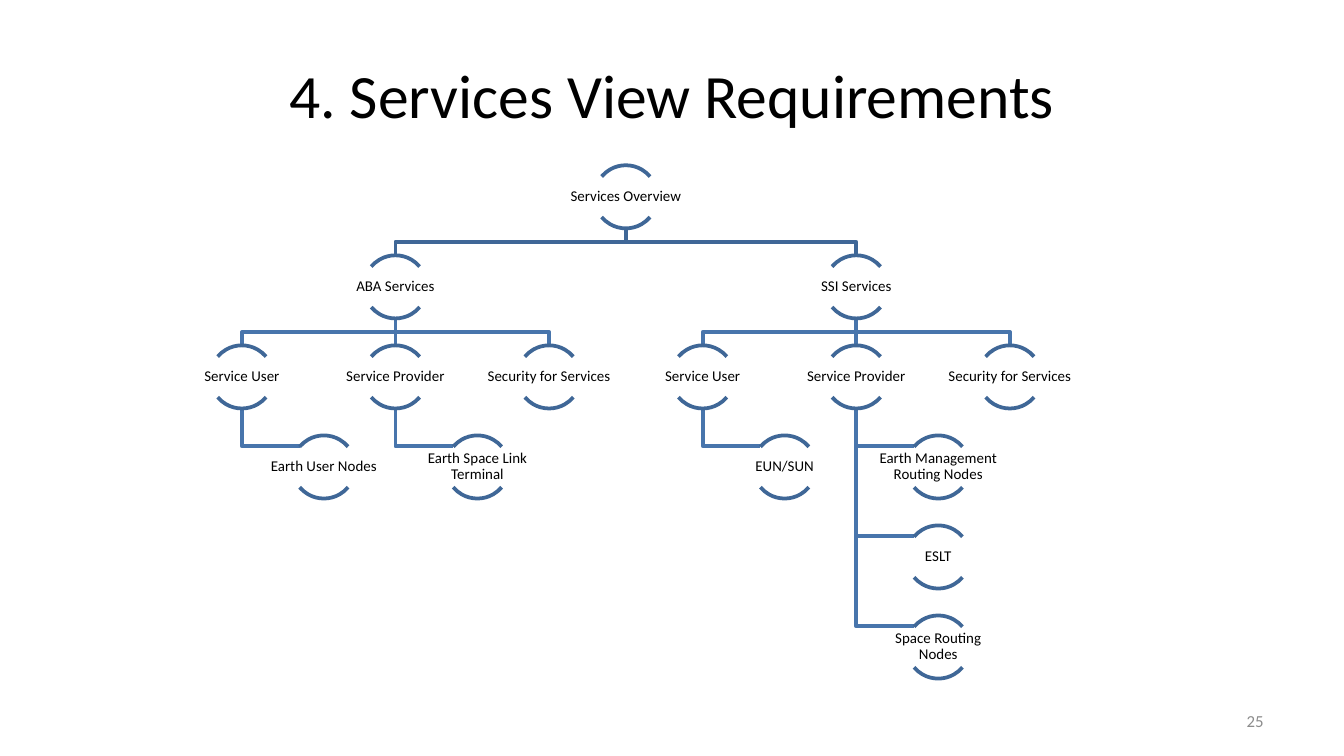
"""Build the services view slide: a title above a tree of services."""
from pptx import Presentation
from pptx.dml.color import RGBColor
from pptx.enum.shapes import MSO_CONNECTOR, MSO_SHAPE
from pptx.enum.text import MSO_ANCHOR, PP_ALIGN
from pptx.oxml.ns import qn
from pptx.util import Inches, Pt

TITLE = "4. Services View Requirements"
NUMBER = "25"
TREE = [
    ("Services Overview", 2.5, 0, None),
    ("ABA Services", 1, 1, 0),
    ("SSI Services", 4, 1, 0),
    ("Service User", 0, 2, 1),
    ("Service Provider", 1, 2, 1),
    ("Security for Services", 2, 2, 1),
    ("Service User", 3, 2, 2),
    ("Service Provider", 4, 2, 2),
    ("Security for Services", 5, 2, 2),
    ("Earth User Nodes", 0, 3, 3),
    ("Earth Space Link Terminal", 1, 3, 4),
    ("EUN/SUN", 3, 3, 6),
    ("Earth Management Routing Nodes", 4, 3, 7),
    ("ESLT", 4, 4, 7),
    ("Space Routing Nodes", 4, 5, 7),
]
COLORS = {"text": "000000", "number": "8C8C8C", "dark": "3F6797", "light": "4875AC"}
FONT = "Calibri"
WIDTH = 10
HEIGHT = WIDTH * 9 / 16
LEFT, TOP = 1.8, 1.23
COL, ROW = 8 / 7, 0.67
RING, INDENT = 0.47, 0.61
WIDE, HIGH = 0.95, 0.3
ARCS = [(132, 192), (24, 84)]


def color(name):
    return RGBColor.from_string(COLORS[name])


def style(frame, text, size, align, name="text"):
    frame.text = text
    frame.word_wrap = True
    frame.vertical_anchor = MSO_ANCHOR.MIDDLE
    para = frame.paragraphs[0]
    para.alignment = align
    font = para.runs[0].font
    font.name, font.size, font.color.rgb = FONT, Pt(size), color(name)
    return para


def label(slide, text, box, size, align, name="text"):
    frame = slide.shapes.add_textbox(*map(Inches, box)).text_frame
    return frame, style(frame, text, size, align, name)


def place(node):
    _, col, row, _ = node
    shift = INDENT if row > 2 else 0
    return LEFT + col * COL + shift, TOP + row * ROW


def ink(shape, name):
    shape.line.color.rgb = color(name)
    shape.line.width = Pt(2)


def link(slide, child):
    x, y = place(child)
    px, py = place(TREE[child[3]])
    py += RING
    name = "dark" if child[2] == 1 else "light"
    if child[2] > 2:
        bend = y + 0.08
        points = [(px, py), (px, bend), (x - 0.18, bend)]
    else:
        mid = (py + y) / 2
        points = [(px, py), (px, mid), (x, mid), (x, y)]
    points = [(Inches(a), Inches(b)) for a, b in points]
    if px == x:
        line = slide.shapes.add_connector(
            MSO_CONNECTOR.STRAIGHT, *points[0], *points[-1])
        props = line._element.spPr
        props.append(props.makeelement(qn("a:effectLst"), {}))
    else:
        path = slide.shapes.build_freeform(*points[0])
        path.add_line_segments(points[1:], close=False)
        line = path.convert_to_shape()
        line.fill.background()
        line.shadow.inherit = False
    ink(line, name)


def draw(slide, node):
    x, y = place(node)
    for ends in ARCS:
        arc = slide.shapes.add_shape(
            MSO_SHAPE.ARC, *map(Inches, (x - RING / 2, y, RING, RING)))
        arc.adjustments[0], arc.adjustments[1] = ends
        arc.fill.background()
        arc.shadow.inherit = False
        ink(arc, "dark")
    box = (x - WIDE / 2, y + (RING - HIGH) / 2, WIDE, HIGH)
    frame, para = label(slide, node[0], box, 8, PP_ALIGN.CENTER)
    frame.margin_left = frame.margin_right = Inches(0.01)
    frame.margin_top = frame.margin_bottom = Inches(0.01)
    para.line_spacing = 0.9


def main():
    deck = Presentation()
    deck.slide_width, deck.slide_height = Inches(WIDTH), Inches(HEIGHT)
    slide = deck.slides.add_slide(deck.slide_layouts[5])
    title = slide.shapes.title
    title.left, title.top, title.width, title.height = map(
        Inches, (0.5, 0.23, 9, 0.94))
    style(title.text_frame, TITLE, 33, PP_ALIGN.CENTER)
    label(slide, NUMBER, (7.17, 5.21, 2.33, 0.3), 9, PP_ALIGN.RIGHT, "number")
    for node in TREE[1:]:
        link(slide, node)
    for node in TREE:
        draw(slide, node)
    deck.save("out.pptx")


if __name__ == "__main__":
    main()
